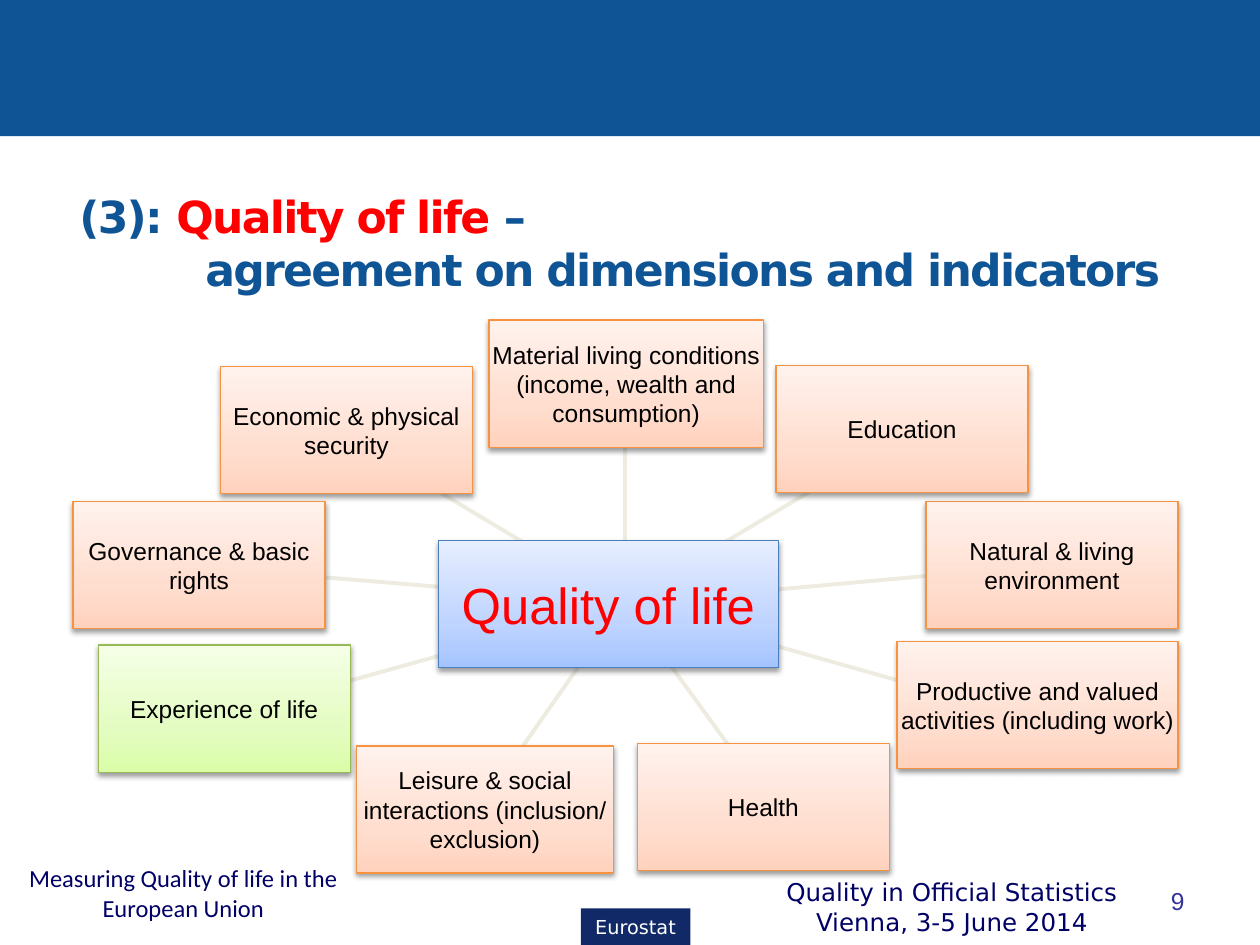
from dataclasses import dataclass

from lxml.etree import SubElement
from pptx import Presentation
from pptx.dml.color import RGBColor
from pptx.enum.shapes import MSO_CONNECTOR, MSO_SHAPE
from pptx.enum.text import MSO_ANCHOR, MSO_AUTO_SIZE, PP_ALIGN
from pptx.oxml.ns import qn
from pptx.util import Inches, Pt


@dataclass(frozen=True)
class Theme:
    """Colours, fonts and type sizes of the slide."""

    blue: str = "0F5494"
    red: str = "FF0000"
    black: str = "000000"
    white: str = "FFFFFF"
    badge: str = "122968"
    footer: str = "000066"
    number: str = "333399"
    spoke: str = "EEECE1"
    orange: tuple = ("F69240", "FFD2BD", "FFDED0", "FFF2ED")
    green: tuple = ("98B955", "DAFDA7", "E4FCC2", "F5FFE7")
    azure: tuple = ("4B7EBC", "A4C4FF", "BFD4FF", "E6EEFF")
    sans: str = "Arial"
    wide: str = "DejaVu Sans"
    humanist: str = "Calibri"
    title_size: float = 25.2
    hub_size: float = 29
    body_size: float = 14
    badge_size: float = 11


THEME = Theme()
NODE_HEIGHT = 1.01

NODES = [
    (1.75, 2.91, 2, ["Economic & physical security"], THEME.orange),
    (0.58, 3.98, 2, ["Governance & basic rights"], THEME.orange),
    (0.78, 5.12, 2, ["Experience of life"], THEME.green),
    (2.83, 5.92, 2.04, ["Leisure & social interactions (inclusion/", "exclusion)"], THEME.orange),
    (5.06, 5.9, 2, ["Health"], THEME.orange),
    (7.12, 5.09, 2.23, ["Productive and valued activities (including work)"], THEME.orange),
    (7.35, 3.98, 2, ["Natural & living environment"], THEME.orange),
    (6.16, 2.9, 2, ["Education"], THEME.orange),
    (3.88, 2.54, 2.18, ["Material living conditions (income, wealth and consumption)"], THEME.orange),
]

SPOKES = [
    ((4.33, 4.41), (3.38, 3.84)),
    ((4, 4.7), (2.55, 4.58)),
    ((4.11, 5.03), (2.75, 5.41)),
    ((4.62, 5.25), (4.13, 5.95)),
    ((5.3, 5.25), (5.8, 5.94)),
    ((5.82, 5.03), (7.16, 5.41)),
    ((5.93, 4.7), (7.37, 4.57)),
    ((5.59, 4.4), (6.53, 3.84)),
    ((4.96, 4.29), (4.96, 3.55)),
]


class SlideBuilder:
    """Draws styled elements on the current slide."""

    def __init__(self, slide, theme):
        """Keep the slide and its theme."""
        self.slide = slide
        self.theme = theme

    def span(self, para, text, font, size, color, bold=False):
        """Add one formatted run to a paragraph."""
        span = para.add_run()
        span.text = text
        span.font.name = font
        span.font.size = Pt(size)
        span.font.bold = bold
        span.font.color.rgb = RGBColor.from_string(color)
        return span

    def paragraphs(self, frame, lines, font, size, color, align=PP_ALIGN.CENTER):
        """Fill a text frame with one paragraph per line."""
        for index, line in enumerate(lines):
            para = frame.add_paragraph() if index else frame.paragraphs[0]
            para.alignment = align
            for part, text in enumerate(line.split("\n")):
                if part:
                    para.add_line_break()
                self.span(para, text, font, size, color)

    def title(self, left, top, width, height):
        """Place and fill the title placeholder."""
        box = self.slide.shapes.title
        box.left, box.top, box.width, box.height = map(Inches, (left, top, width, height))
        frame = box.text_frame
        frame.auto_size = MSO_AUTO_SIZE.NONE
        frame.vertical_anchor = MSO_ANCHOR.MIDDLE
        para = frame.paragraphs[0]
        para.alignment = PP_ALIGN.LEFT
        tabs = SubElement(para._p.get_or_add_pPr(), qn("a:tabLst"))
        SubElement(tabs, qn("a:tab"), pos=str(Inches(1)), algn="l")
        theme = self.theme
        for text, color in [
            ("(3): ", theme.blue),
            ("Quality of life", theme.red),
            (" – ", theme.blue),
            ("\tagreement on dimensions and indicators", theme.blue),
        ]:
            if text.startswith("\t"):
                para.add_line_break()
            span = self.span(para, text, theme.wide, theme.title_size, color, True)
            span.font._element.set("spc", "-100")

    def panel(self, left, top, width, height, color):
        """Add a plain filled rectangle."""
        box = self.slide.shapes.add_shape(MSO_SHAPE.RECTANGLE, *map(Inches, (left, top, width, height)))
        box.shadow.inherit = False
        box.fill.solid()
        box.fill.fore_color.rgb = RGBColor.from_string(color)
        box.line.fill.background()
        return box

    def badge(self, left, top, width, height, text):
        """Add the labelled footer badge."""
        frame = self.panel(left, top, width, height, self.theme.badge).text_frame
        frame.word_wrap = False
        frame.vertical_anchor = MSO_ANCHOR.MIDDLE
        self.paragraphs(frame, [text], self.theme.wide, self.theme.badge_size, self.theme.white)

    def spoke(self, start, end):
        """Add a line from the hub to a node."""
        line = self.slide.shapes.add_connector(MSO_CONNECTOR.STRAIGHT, *map(Inches, start + end))
        line.line.color.rgb = RGBColor.from_string(self.theme.spoke)
        line.line.width = Pt(2.25)
        SubElement(line._element.spPr, qn("a:effectLst"))

    def node(self, left, top, width, lines, palette, size, color):
        """Add a shaded box with a soft shadow."""
        outline, *shades = palette
        box = self.panel(left, top, width, NODE_HEIGHT, outline)
        box.line.color.rgb = RGBColor.from_string(outline)
        box.line.width = Pt(0.75)
        box.fill.gradient()
        box.fill.gradient_angle = 90
        properties = box._element.spPr
        stops = properties.find(qn("a:gradFill")).find(qn("a:gsLst"))
        stops.clear()
        for position, shade in zip((0, 35000, 100000), shades):
            stop = SubElement(stops, qn("a:gs"), pos=str(position))
            SubElement(stop, qn("a:srgbClr"), val=shade)
        shadow = SubElement(
            properties.find(qn("a:effectLst")), qn("a:outerShdw"),
            blurRad=str(Pt(3.1)), dist=str(Pt(1.6)), dir="5400000", rotWithShape="0",
        )
        tint = SubElement(shadow, qn("a:srgbClr"), val=self.theme.black)
        SubElement(tint, qn("a:alpha"), val="38000")
        frame = box.text_frame
        frame.margin_left = frame.margin_right = frame.margin_top = frame.margin_bottom = 0
        frame.word_wrap = True
        frame.vertical_anchor = MSO_ANCHOR.MIDDLE
        self.paragraphs(frame, lines, self.theme.sans, size, color)

    def caption(self, left, top, width, height, text, font, color, align=PP_ALIGN.CENTER):
        """Add a footer text box."""
        box = self.slide.shapes.add_textbox(*map(Inches, (left, top, width, height)))
        frame = box.text_frame
        frame.word_wrap = True
        frame.vertical_anchor = MSO_ANCHOR.MIDDLE
        self.paragraphs(frame, [text], font, self.theme.body_size, color, align)


def main():
    """Build and save the deck."""
    deck = Presentation()
    deck.slide_width, deck.slide_height = Inches(10), Inches(7.5)
    page = SlideBuilder(deck.slides.add_slide(deck.slide_layouts[5]), THEME)
    page.panel(0, 0, 10, 1.08, THEME.blue)
    page.title(0.53, 1.34, 9, 1.16)
    page.badge(4.61, 7.21, 0.87, 0.29, "Eurostat")
    for start, end in SPOKES:
        page.spoke(start, end)
    for left, top, width, lines, palette in NODES:
        page.node(left, top, width, lines, palette, THEME.body_size, THEME.black)
    page.node(3.48, 4.29, 2.7, ["Quality of life"], THEME.azure, THEME.hub_size, THEME.red)
    page.caption(0, 6.82, 2.91, 0.53, "Measuring Quality of life in the European Union", THEME.humanist, THEME.footer)
    page.caption(5.94, 6.91, 3.23, 0.57, "Quality in Official Statistics\nVienna, 3-5 June 2014", THEME.wide, THEME.footer)
    page.caption(7.17, 6.95, 2.33, 0.4, "9", THEME.sans, THEME.number, PP_ALIGN.RIGHT)
    deck.save("out.pptx")


if __name__ == "__main__":
    main()
